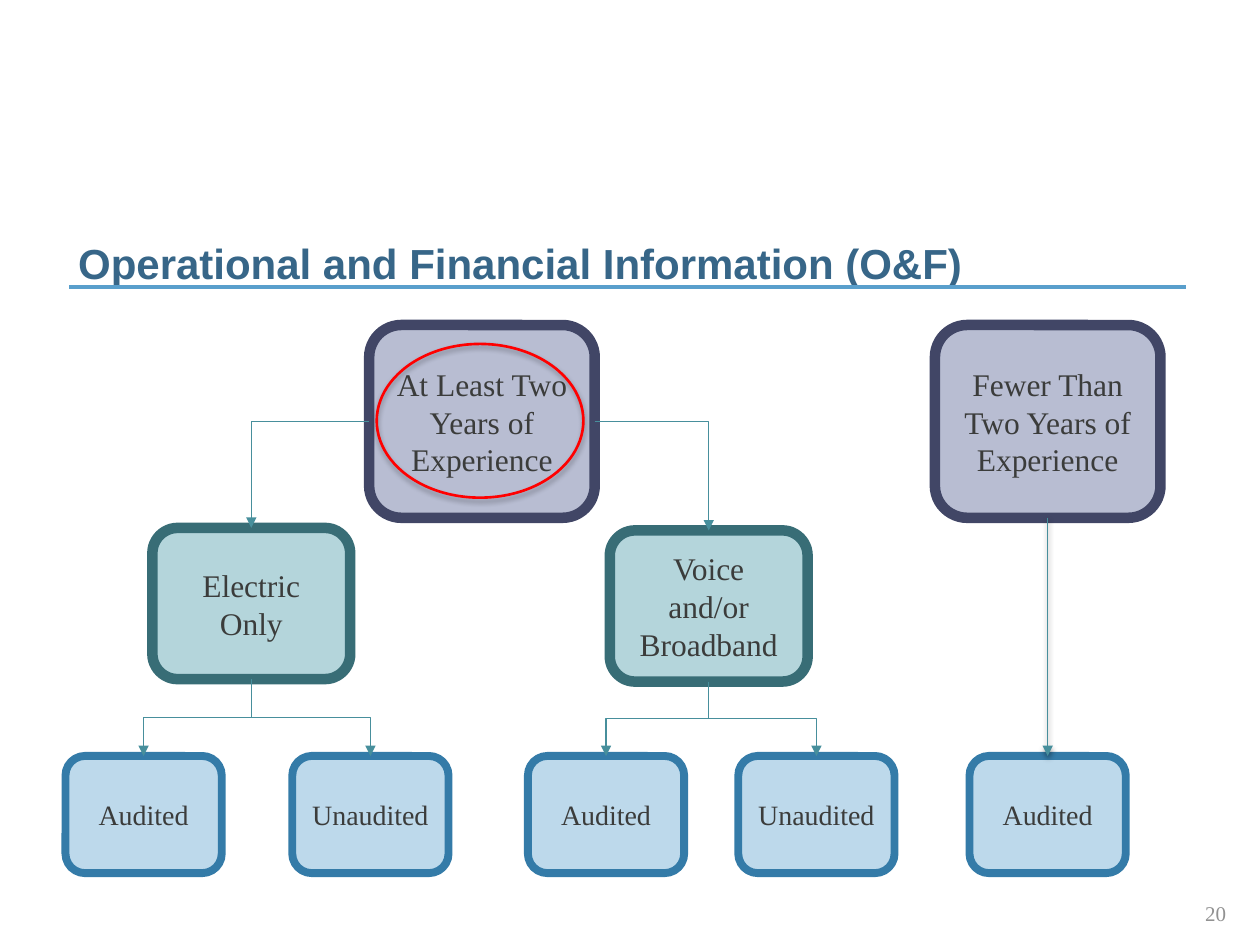
from lxml import etree
from pptx import Presentation
from pptx.dml.color import RGBColor
from pptx.enum.shapes import MSO_CONNECTOR as CONNECTOR, MSO_SHAPE as SHAPE
from pptx.enum.text import MSO_ANCHOR as ANCHOR, PP_ALIGN as ALIGN
from pptx.oxml import parse_xml
from pptx.oxml.ns import nsdecls, qn
from pptx.util import Inches, Pt

COLORS = {
    "title": "376688", "rule": "599FCC", "text": "3B3C3B", "number": "929292",
    "arrow": "478F9C", "ring": "FF0000",
    "experience_fill": "B8BDD2", "experience_line": "414666",
    "service_fill": "B4D5DB", "service_line": "386D76",
    "audit_fill": "BDD9EB", "audit_line": "347BA8",
}
SIZES = {
    "experience": (1.79, 1.53, 18, 6),
    "service": (1.57, 1.2, 18, 6),
    "audit": (1.24, 0.93, 16, 4.5),
}
TOP, LEFT, BOTTOM, RIGHT = range(4)


def color(name):
    return RGBColor.from_string(COLORS[name])


def format_text(text_frame, font_name, size, color_name, align, bold=False):
    text_frame.word_wrap = True
    text_frame.vertical_anchor = ANCHOR.MIDDLE
    for paragraph in text_frame.paragraphs:
        paragraph.alignment = align
        for run in paragraph.runs:
            run.font.name = font_name
            run.font.size = Pt(size)
            run.font.bold = bold
            run.font.color.rgb = color(color_name)


def add_effects(shape, shadow=""):
    shape._element.spPr.append(
        parse_xml(f"<a:effectLst {nsdecls('a')}>{shadow}</a:effectLst>"))


def soft_shadow(blur, distance, opacity):
    return (f'<a:outerShdw blurRad="{Pt(blur)}" dist="{Pt(distance)}" dir="5400000" '
            f'rotWithShape="0"><a:srgbClr val="000000"><a:alpha val="{opacity * 1000}"/>'
            '</a:srgbClr></a:outerShdw>')


def add_title(slide, left, top, width, height):
    title = slide.shapes.title
    title.left, title.top = Inches(left), Inches(top)
    title.width, title.height = Inches(width), Inches(height)
    title.text_frame.text = "Operational and Financial Information (O&F)"
    format_text(title.text_frame, "Arial", 24, "title", ALIGN.LEFT, bold=True)
    rule_y = Inches(top + 0.53)
    rule = slide.shapes.add_connector(
        CONNECTOR.STRAIGHT, Inches(9.41), rule_y, Inches(0.55), rule_y)
    rule.line.color.rgb = color("rule")
    rule.line.width = Pt(2.25)
    add_effects(rule)


def add_box(slide, kind, text, left, top):
    width, height, font_size, line_width = SIZES[kind]
    box = slide.shapes.add_shape(SHAPE.ROUNDED_RECTANGLE, Inches(left), Inches(top),
                                 Inches(width), Inches(height))
    box.shadow.inherit = False
    box.fill.solid()
    box.fill.fore_color.rgb = color(f"{kind}_fill")
    box.line.color.rgb = color(f"{kind}_line")
    box.line.width = Pt(line_width)
    box.text_frame.text = text
    format_text(box.text_frame, "Times New Roman", font_size, "text", ALIGN.CENTER)
    return box


def add_arrow(slide, kind, start, side, end, shadow=""):
    arrow = slide.shapes.add_connector(kind, 0, 0, 0, 0)
    arrow.begin_connect(start, side)
    arrow.end_connect(end, TOP)
    arrow.line.color.rgb = color("arrow")
    arrow.line.width = Pt(0.75)
    etree.SubElement(arrow.line._get_or_add_ln(), qn("a:tailEnd"), type="triangle")
    add_effects(arrow, shadow)
    return arrow


def add_side_arrow(slide, start, side, end):
    arrow = add_arrow(slide, CONNECTOR.ELBOW, start, side, end)
    arrow._element.spPr.find(qn("a:prstGeom")).set("prst", "bentConnector2")


def add_drop_arrow(slide, start, end):
    arrow = add_arrow(slide, CONNECTOR.ELBOW, start, BOTTOM, end)
    goes_left = arrow.end_x < arrow.begin_x
    center_x = arrow.left + arrow.width // 2
    center_y = arrow.top + arrow.height // 2
    width, height = arrow.height, arrow.width
    arrow.left, arrow.top = center_x - width // 2, center_y - height // 2
    arrow.width, arrow.height = width, height
    transform = arrow._element.spPr.find(qn("a:xfrm"))
    transform.set("rot", str((90 if goes_left else 270) * 60000))
    transform.set("flipH", "0" if goes_left else "1")


def add_service_branch(slide, experience, side, text, left, top, audit_lefts, audit_top):
    service = add_box(slide, "service", text, left, top)
    add_side_arrow(slide, experience, side, service)
    for label, audit_left in zip(("Audited", "Unaudited"), audit_lefts):
        audit = add_box(slide, "audit", label, audit_left, audit_top)
        add_drop_arrow(slide, service, audit)


def add_tree(slide, left, top):
    audit_top = top + 3.42
    experienced = add_box(slide, "experience", "At Least Two Years of Experience",
                          left + 2.41, top)
    add_service_branch(slide, experienced, LEFT, "Electric Only", left + 0.69, top + 1.61,
                       (left, left + 1.8), audit_top)
    add_service_branch(slide, experienced, RIGHT, "Voice and/or Broadband", left + 4.32,
                       top + 1.63, (left + 3.67, left + 5.34), audit_top)
    newcomer = add_box(slide, "experience", "Fewer Than Two Years of Experience",
                       left + 6.9, top)
    audit_left = newcomer.left.inches - left + (SIZES["experience"][0] - SIZES["audit"][0]) / 2
    audit = add_box(slide, "audit", "Audited", left + audit_left, audit_top)
    add_arrow(slide, CONNECTOR.STRAIGHT, newcomer, BOTTOM, audit, soft_shadow(3.1, 1.6, 38))


def add_ring(slide, left, top, width, height):
    ring = slide.shapes.add_shape(SHAPE.OVAL, Inches(left), Inches(top),
                                  Inches(width), Inches(height))
    ring.fill.background()
    ring.line.color.rgb = color("ring")
    ring.line.width = Pt(1.5)
    add_effects(ring, soft_shadow(3.1, 1.8, 35))


def add_page_number(slide, left, top, width, height):
    box = slide.shapes.add_textbox(Inches(left), Inches(top), Inches(width), Inches(height))
    box.text_frame.text = "20"
    format_text(box.text_frame, "Times New Roman", 12, "number", ALIGN.RIGHT)


def main():
    presentation = Presentation()
    presentation.slide_width, presentation.slide_height = Inches(10), Inches(7.5)
    slide = presentation.slides.add_slide(presentation.slide_layouts[5])
    add_title(slide, 0.52, 1.75, 8.54, 0.67)
    add_tree(slide, 0.52, 2.58)
    add_ring(slide, 2.99, 2.73, 1.64, 1.22)
    add_page_number(slide, 7.58, 7.05, 2.25, 0.4)
    presentation.save("out.pptx")


if __name__ == "__main__":
    main()
